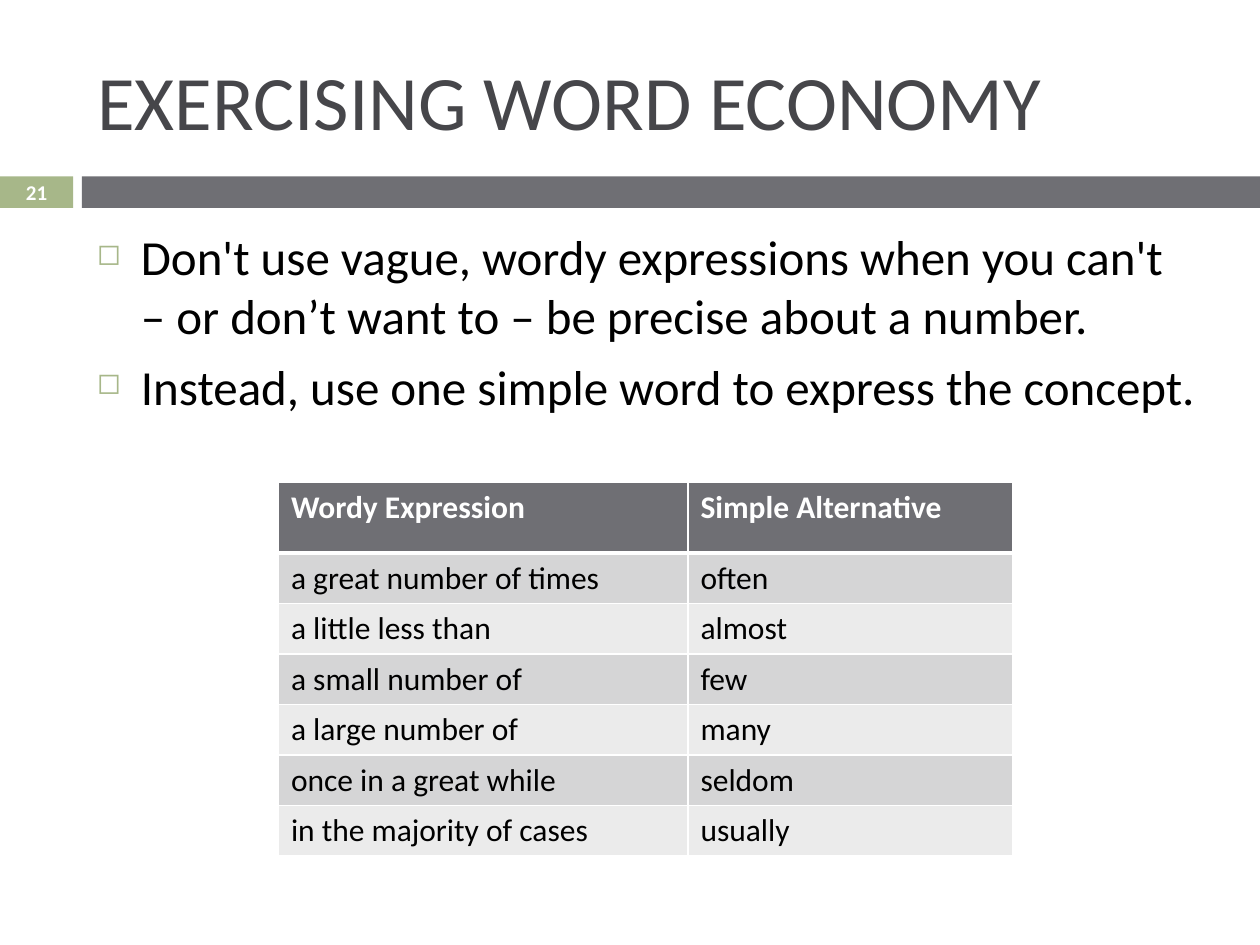
from lxml import etree
from pptx import Presentation
from pptx import util as u
from pptx.dml.color import RGBColor
from pptx.enum import shapes, text
from pptx.oxml.ns import qn

FONT = "Calibri"
GRAY, GREEN, TITLE, BLACK, WHITE = "6F6F74", "A7B789", "46464A", "000000", "FFFFFF"
BANDS = ("D5D5D6", "EBEBEB")

BULLETS = [
    "Don't use vague, wordy expressions when you can't – or don’t want to – "
    "be precise about a number.",
    "Instead, use one simple word to express the concept.",
]
ROWS = [
    ("Wordy Expression", "Simple Alternative"),
    ("a great number of times", "often"),
    ("a little less than", "almost"),
    ("a small number of", "few"),
    ("a large number of", "many"),
    ("once in a great while", "seldom"),
    ("in the majority of cases", "usually"),
]


def rgb(value):
    return RGBColor.from_string(value)


def inches(*values):
    return [u.Inches(v) for v in values]


class Deck:
    def __init__(self):
        self.prs = Presentation()
        self.prs.slide_width, self.prs.slide_height = inches(10, 7.5)
        self.s = self.prs.slides.add_slide(self.prs.slide_layouts[5])

    def style(self, p, size, color, bold=False, align=text.PP_ALIGN.LEFT):
        p.alignment = align
        for r in p.runs:
            r.font.name, r.font.size, r.font.bold = FONT, u.Pt(size), bold
            r.font.color.rgb = rgb(color)

    def bar(self, x, y, w, h, color):
        sp = self.s.shapes.add_shape(shapes.MSO_SHAPE.RECTANGLE, *inches(x, y, w, h))
        sp.shadow.inherit = False
        sp.fill.solid()
        sp.fill.fore_color.rgb = rgb(color)
        sp.line.fill.background()
        return sp

    def title(self, words, x, y, w, h):
        sp = self.s.shapes.title
        sp.left, sp.top, sp.width, sp.height = inches(x, y, w, h)
        tf = sp.text_frame
        tf.text = words
        tf.vertical_anchor = text.MSO_ANCHOR.MIDDLE
        self.style(tf.paragraphs[0], 44, TITLE)

    def number(self, sp, words):
        tf = sp.text_frame
        tf.margin_left = tf.margin_right = tf.margin_top = tf.margin_bottom = 0
        tf.vertical_anchor = text.MSO_ANCHOR.MIDDLE
        tf.text = words
        self.style(tf.paragraphs[0], 12, WHITE, True, text.PP_ALIGN.CENTER)

    def bullets(self, items, x, y, w, h):
        tf = self.s.shapes.add_textbox(*inches(x, y, w, h)).text_frame
        tf.word_wrap = True
        for i, item in enumerate(items):
            p = tf.add_paragraph() if i else tf.paragraphs[0]
            p.text = item
            pPr = p._p.get_or_add_pPr()
            pPr.set("marL", str(u.Inches(0.35)))
            pPr.set("indent", str(-u.Inches(0.35)))
            clr = etree.SubElement(pPr, qn("a:buClr"))
            etree.SubElement(clr, qn("a:srgbClr"), val=GREEN)
            etree.SubElement(pPr, qn("a:buSzPct"), val="60000")
            etree.SubElement(pPr, qn("a:buChar"), char="◻")
            if i:
                p.space_before = u.Pt(7)
            self.style(p, 28, BLACK)

    def borders(self, cell, bottom):
        tcPr = cell._tc.get_or_add_tcPr()
        for i, (tag, width) in enumerate(
                (("a:lnL", 1), ("a:lnR", 1), ("a:lnT", 1), ("a:lnB", bottom))):
            ln = etree.Element(qn(tag), w=str(u.Pt(width)))
            fill = etree.SubElement(ln, qn("a:solidFill"))
            etree.SubElement(fill, qn("a:srgbClr"), val=WHITE)
            tcPr.insert(i, ln)

    def table(self, rows, x, y, widths, head_h, row_h):
        height = head_h + row_h * (len(rows) - 1)
        frame = self.s.shapes.add_table(
            len(rows), len(widths), *inches(x, y, sum(widths), height))
        tbl = frame.table
        for col, width in zip(tbl.columns, widths):
            col.width = u.Inches(width)
        for i, row in enumerate(rows):
            head = i == 0
            tbl.rows[i].height = u.Inches(head_h if head else row_h)
            for j, words in enumerate(row):
                cell = tbl.cell(i, j)
                cell.text = words
                cell.fill.solid()
                cell.fill.fore_color.rgb = rgb(GRAY if head else BANDS[(i - 1) % 2])
                self.style(cell.text_frame.paragraphs[0], 18,
                           WHITE if head else BLACK, head)
                # Rule under the header, shared with the row below it
                self.borders(cell, 3 if head else 1)
                if i == 1:
                    cell._tc.tcPr.find(qn("a:lnT")).set("w", str(u.Pt(3)))


def main():
    d = Deck()
    # Title and divider band with the slide number
    d.title("EXERCISING WORD ECONOMY", 0.67, 0.25, 8.92, 1.08)
    d.number(d.bar(0, 1.4, 0.58, 0.25, GREEN), "21")
    d.bar(0.65, 1.4, 9.35, 0.25, GRAY)
    # Advice and examples
    d.bullets(BULLETS, 0.67, 1.75, 8.92, 1.67)
    d.table(ROWS, 2.21, 3.83, (3.25, 2.58), 0.56, 0.4)
    d.prs.save("out.pptx")


if __name__ == "__main__":
    main()
